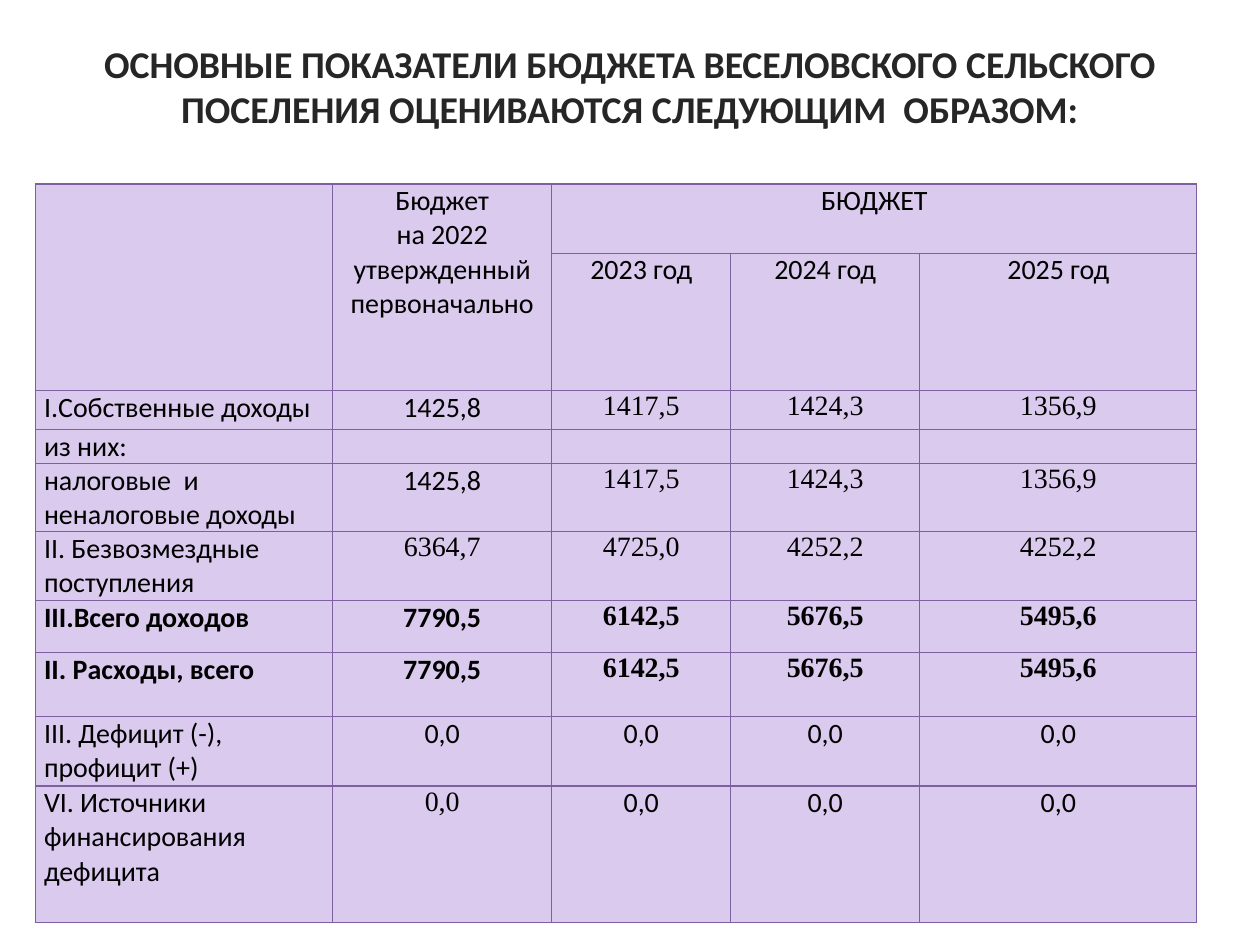
import pptx
import pptx.util
import pptx.dml.color
import pptx.enum.text
import pptx.oxml
from pptx.oxml.ns import qn
from lxml import etree

Inches, Pt = pptx.util.Inches, pptx.util.Pt
ALIGN, ANCHOR = pptx.enum.text.PP_ALIGN, pptx.enum.text.MSO_ANCHOR

# Content
TITLE = ("ОСНОВНЫЕ ПОКАЗАТЕЛИ БЮДЖЕТА ВЕСЕЛОВСКОГО СЕЛЬСКОГО "
         "ПОСЕЛЕНИЯ ОЦЕНИВАЮТСЯ СЛЕДУЮЩИМ  ОБРАЗОМ:")
HEADER = [
    ["", "Бюджет\nна 2022 утвержденный первоначально", "БЮДЖЕТ", "", ""],
    ["", "", "2023 год", "2024 год", "2025 год"],
]
BODY = [
    ["I.Собственные доходы", "1425,8", "1417,5", "1424,3", "1356,9"],
    ["из них:", "", "", "", ""],
    ["налоговые  и неналоговые доходы", "1425,8", "1417,5", "1424,3", "1356,9"],
    ["II. Безвозмездные поступления", "6364,7", "4725,0", "4252,2", "4252,2"],
    ["III.Всего доходов", "7790,5", "6142,5", "5676,5", "5495,6"],
    ["II. Расходы, всего", "7790,5", "6142,5", "5676,5", "5495,6"],
    ["III. Дефицит (-), профицит (+)", "0,0", "0,0", "0,0", "0,0"],
    ["VI. Источники финансирования дефицита", "0,0", "0,0", "0,0", "0,0"],
]
ROWS = HEADER + BODY
MERGES = [((0, 0), (1, 0)), ((0, 1), (1, 1)), ((0, 2), (0, 4))]

# Style
COLORS = {"title": "262626", "text": "000000", "cell": "DACAED", "border": "7D60A0"}
SANS, SERIF = "Calibri", "Times New Roman"
COLUMN_WIDTHS = [2.36, 1.74, 1.42, 1.5, 2.2]
ROW_HEIGHTS = [0.55, 1.09, 0.31, 0.27, 0.54, 0.55, 0.41, 0.51, 0.55, 1.08]
BOLD_ROWS = {6, 7}
SERIF_ROWS = {2, 4, 5, 6, 7}
SERIF_CELLS = {(5, 1), (9, 1)}


def rgb(name):
    return pptx.dml.color.RGBColor.from_string(COLORS[name])


def style_paragraph(paragraph, size, color, font_name, bold, alignment):
    paragraph.alignment = alignment
    font = paragraph.font
    font.size, font.name, font.bold = Pt(size), font_name, bold
    font.color.rgb = rgb(color)


def add_borders(cell):
    properties = cell._tc.get_or_add_tcPr()
    for index, side in enumerate(("a:lnL", "a:lnR", "a:lnT", "a:lnB")):
        line = etree.Element(qn(side), w=str(Pt(0.75)))
        fill = etree.SubElement(line, qn("a:solidFill"))
        etree.SubElement(fill, qn("a:srgbClr"), val=COLORS["border"])
        properties.insert(index, line)


def fill_cell(cell, text, row, column):
    cell.margin_left = cell.margin_right = Inches(0.07)
    cell.margin_top = cell.margin_bottom = 0
    cell.fill.solid()
    cell.fill.fore_color.rgb = rgb("cell")
    add_borders(cell)
    serif = (row in SERIF_ROWS and column >= 2) or (row, column) in SERIF_CELLS
    cell.text = text
    for paragraph in cell.text_frame.paragraphs:
        style_paragraph(paragraph, 16, "text", SERIF if serif else SANS,
                        row in BOLD_ROWS, ALIGN.CENTER if column else ALIGN.LEFT)


def add_title(slide):
    title = slide.shapes.add_textbox(Inches(0.5), Inches(0.13), Inches(9), Inches(1.42))
    frame = title.text_frame
    frame.word_wrap = True
    frame.vertical_anchor = ANCHOR.MIDDLE
    frame.margin_bottom = Inches(0.37)
    frame.text = TITLE
    style_paragraph(frame.paragraphs[0], 21.6, "title", SANS, True, ALIGN.CENTER)


def add_budget_table(slide):
    table = slide.shapes.add_table(
        len(ROWS), len(COLUMN_WIDTHS), Inches(0.28), Inches(1.46),
        Inches(sum(COLUMN_WIDTHS)), Inches(sum(ROW_HEIGHTS))).table
    for column, width in zip(table.columns, COLUMN_WIDTHS):
        column.width = Inches(width)
    for row, height in zip(table.rows, ROW_HEIGHTS):
        row.height = Inches(height)
    for row, texts in enumerate(ROWS):
        for column, text in enumerate(texts):
            fill_cell(table.cell(row, column), text, row, column)
    for first, last in MERGES:
        table.cell(*first).merge(table.cell(*last))


def main():
    presentation = pptx.Presentation()
    presentation.slide_width, presentation.slide_height = Inches(10), Inches(7.5)
    slide = presentation.slides.add_slide(presentation.slide_layouts[6])
    add_title(slide)
    add_budget_table(slide)
    presentation.save("out.pptx")


if __name__ == "__main__":
    main()
